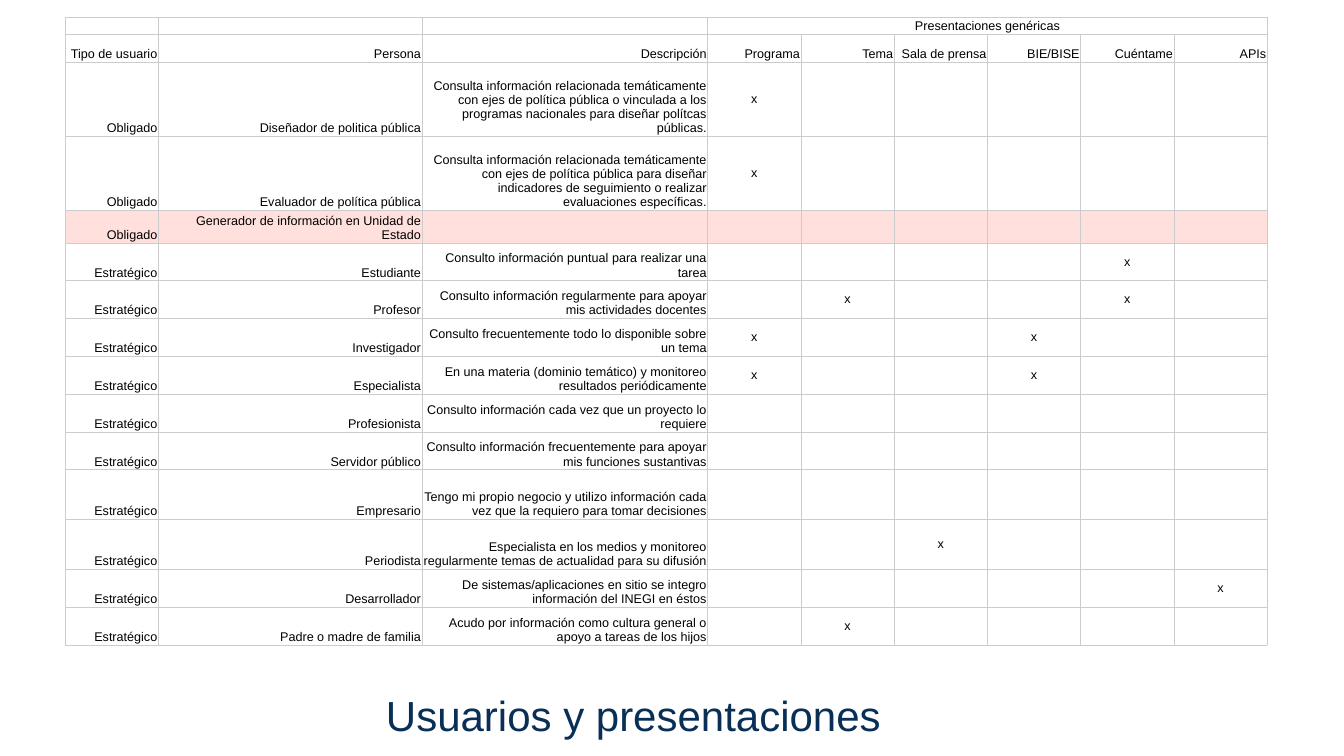
import pptx
import pptx.dml.color
import pptx.enum.text
import pptx.oxml
import pptx.oxml.ns
import pptx.util

ALIGN = pptx.enum.text.PP_ALIGN
ANCHOR = pptx.enum.text.MSO_ANCHOR
INK, NAVY, ROSE, GREY = "000000", "092F57", "FFE0DC", "CCCCCC"

CHANNELS = ["Programa", "Tema", "Sala de prensa", "BIE/BISE", "Cuéntame", "APIs"]
HEADINGS = ["Tipo de usuario", "Persona", "Descripción"] + CHANNELS
COLUMN_WIDTHS = [6.94, 19.61, 21.26] + [6.94] * len(CHANNELS)
HEADER_HEIGHTS = [2, 3.73]

USERS = [
    (9.8, "Obligado", "Diseñador de politica pública",
     "Consulta información relacionada temáticamente con ejes de política pública o vinculada a los "
     "programas nacionales para diseñar polítcas públicas.", ["Programa"]),
    (9.8, "Obligado", "Evaluador de política pública",
     "Consulta información relacionada temáticamente con ejes de política pública para diseñar "
     "indicadores de seguimiento o realizar evaluaciones específicas.", ["Programa"]),
    (3.73, "Obligado", "Generador de información en Unidad de Estado", "", []),
    (5, "Estratégico", "Estudiante",
     "Consulto información puntual para realizar una tarea", ["Cuéntame"]),
    (5, "Estratégico", "Profesor",
     "Consulto información regularmente para apoyar mis actividades docentes", ["Tema", "Cuéntame"]),
    (5, "Estratégico", "Investigador",
     "Consulto frecuentemente todo lo disponible sobre un tema", ["Programa", "BIE/BISE"]),
    (5, "Estratégico", "Especialista",
     "En una materia (dominio temático) y monitoreo resultados periódicamente",
     ["Programa", "BIE/BISE"]),
    (5, "Estratégico", "Profesionista",
     "Consulto información cada vez que un proyecto lo requiere", []),
    (5, "Estratégico", "Servidor público",
     "Consulto información frecuentemente para apoyar mis funciones sustantivas", []),
    (6.6, "Estratégico", "Empresario",
     "Tengo mi propio negocio y utilizo información cada vez que la requiero para tomar decisiones", []),
    (6.6, "Estratégico", "Periodista",
     "Especialista en los medios y monitoreo regularmente temas de actualidad para su difusión",
     ["Sala de prensa"]),
    (5, "Estratégico", "Desarrollador",
     "De sistemas/aplicaciones en sitio se integro información del INEGI en éstos", ["APIs"]),
    (5, "Estratégico", "Padre o madre de familia",
     "Acudo por información como cultura general o apoyo a tareas de los hijos", ["Tema"]),
]


def color(value):
    return pptx.dml.color.RGBColor.from_string(value)


class Deck:
    font = "Arial"
    cell_size = 18
    cell_margin = pptx.util.Inches(0.02)
    border_width = pptx.util.Pt(0.6)

    def __init__(self, width, height):
        self.presentation = pptx.Presentation()
        self.presentation.slide_width = pptx.util.Inches(width)
        self.presentation.slide_height = pptx.util.Inches(height)
        self.slide = self.presentation.slides.add_slide(self.presentation.slide_layouts[6])

    def across(self, percent):
        return round(self.presentation.slide_width * percent / 100)

    def down(self, percent):
        return round(self.presentation.slide_height * percent / 100)

    def box(self, left, top, width, height):
        return self.across(left), self.down(top), self.across(width), self.down(height)

    def fill_text(self, frame, text, size, ink, align):
        frame.text = text
        frame.word_wrap = True
        for paragraph in frame.paragraphs:
            paragraph.alignment = align
            for run in paragraph.runs:
                run.font.name = self.font
                run.font.size = pptx.util.Pt(size)
                run.font.color.rgb = color(ink)

    def title(self, text, left, top, width, height):
        frame = self.slide.shapes.add_textbox(*self.box(left, top, width, height)).text_frame
        frame.margin_left = frame.margin_right = pptx.util.Inches(0.05)
        frame.margin_top = frame.margin_bottom = pptx.util.Inches(0.05)
        self.fill_text(frame, text, 60, NAVY, ALIGN.LEFT)

    def table(self, left, top, widths, heights):
        frame = self.slide.shapes.add_table(
            len(heights), len(widths), *self.box(left, top, sum(widths), sum(heights)))
        table = frame.table
        table.first_row = table.horz_banding = False
        for column, width in zip(table.columns, widths):
            column.width = self.across(width)
        for row, height in zip(table.rows, heights):
            row.height = self.down(height)
        return table

    def cell(self, cell, text, align=ALIGN.RIGHT, anchor=ANCHOR.BOTTOM, fill=None):
        cell.margin_left = cell.margin_right = self.cell_margin
        cell.margin_top = cell.margin_bottom = self.cell_margin
        cell.vertical_anchor = anchor
        self.fill_text(cell.text_frame, text, self.cell_size, INK, align)
        if fill:
            cell.fill.solid()
            cell.fill.fore_color.rgb = color(fill)
        else:
            cell.fill.background()
        properties = cell._tc.get_or_add_tcPr()
        for index, side in enumerate(("lnL", "lnR", "lnT", "lnB")):
            properties.insert(index, pptx.oxml.parse_xml(
                f'<a:{side} {pptx.oxml.ns.nsdecls("a")} w="{self.border_width}">'
                f'<a:solidFill><a:srgbClr val="{GREY}"/></a:solidFill></a:{side}>'))


def main():
    deck = Deck(26.67, 15)
    deck.title("Usuarios y presentaciones", 28.53, 90.87, 69.52, 6.87)

    heights = HEADER_HEIGHTS + [user[0] for user in USERS]
    matrix = deck.table(4.84, 2.27, COLUMN_WIDTHS, heights)
    first_channel = len(HEADINGS) - len(CHANNELS)

    for column, heading in enumerate(HEADINGS):
        group = "Presentaciones genéricas" if column == first_channel else ""
        deck.cell(matrix.cell(0, column), group, ALIGN.CENTER)
        deck.cell(matrix.cell(1, column), heading)
    matrix.cell(0, first_channel).merge(matrix.cell(0, len(HEADINGS) - 1))

    for row, (_, kind, persona, description, used) in enumerate(USERS, len(HEADER_HEIGHTS)):
        fill = None if description else ROSE
        for column, text in enumerate((kind, persona, description)):
            deck.cell(matrix.cell(row, column), text, fill=fill)
        for column, channel in enumerate(CHANNELS, first_channel):
            mark = "x" if channel in used else ""
            deck.cell(matrix.cell(row, column), mark, ALIGN.CENTER, ANCHOR.MIDDLE, fill)

    deck.presentation.save("out.pptx")


if __name__ == "__main__":
    main()
